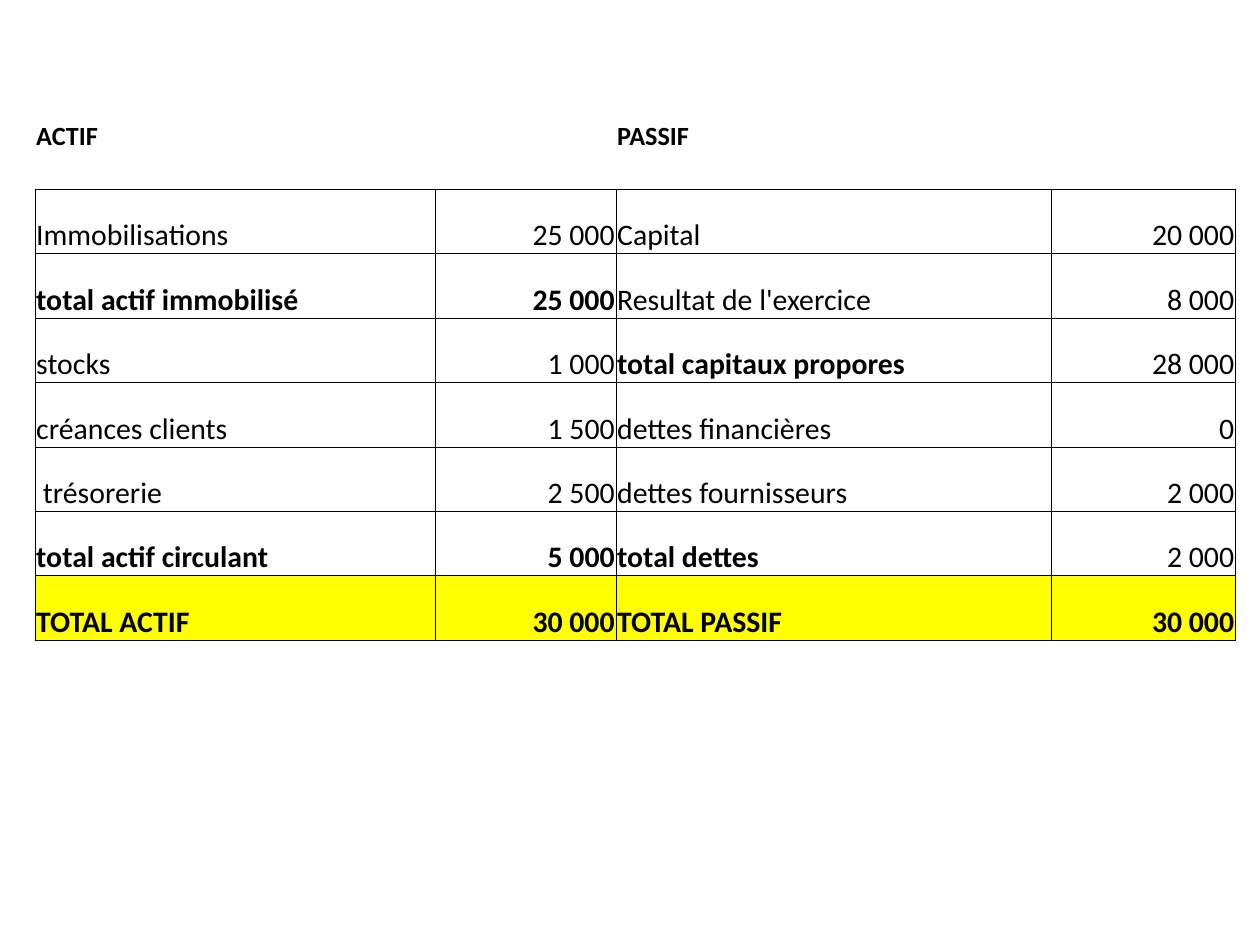
import pptx
import pptx.dml.color
import pptx.enum.text
import pptx.oxml.ns
import pptx.util
import lxml.etree

Pt = pptx.util.Pt
BLACK = pptx.dml.color.RGBColor(0x00, 0x00, 0x00)
YELLOW = pptx.dml.color.RGBColor(0xFF, 0xFF, 0x00)
PLAIN_TABLE_STYLE = "{2D5ABB26-0587-4C30-8999-92F81FD0307C}"
COLUMN_WIDTHS = [229, 103, 249, 105]
HEADING_HEIGHT, GAP_HEIGHT, ENTRY_HEIGHT = 32.6, 20.9, 36.8
HEADING_ROWS = 2

BALANCE_SHEET = [
    ("ACTIF", "", "PASSIF", ""),
    ("", "", "", ""),
    ("Immobilisations", "25 000", "Capital", "20 000"),
    ("total actif immobilisé", "25 000", "Resultat de l'exercice", "8 000"),
    ("stocks", "1 000", "total capitaux propores", "28 000"),
    ("créances clients", "1 500", "dettes financières", "0"),
    (" trésorerie", "2 500", "dettes fournisseurs", "2 000"),
    ("total actif circulant", "5 000", "total dettes", "2 000"),
    ("TOTAL ACTIF", "30 000", "TOTAL PASSIF", "30 000"),
]


class BalanceSlide:
    font_name = "Calibri"
    heading_size = Pt(15)
    entry_size = Pt(17)
    border_width = Pt(0.5)

    def __init__(self, slide):
        self.slide = slide

    def add_child(self, parent, tag, **attributes):
        return lxml.etree.SubElement(parent, pptx.oxml.ns.qn(tag), **attributes)

    def draw_borders(self, cell, sides):
        properties = cell._tc.get_or_add_tcPr()
        for position, side in enumerate(sides):
            border = self.add_child(properties, f"a:ln{side}", w=str(self.border_width))
            fill = self.add_child(border, "a:solidFill")
            self.add_child(fill, "a:srgbClr", val=str(BLACK))
            properties.insert(position, border)

    def write_cell(self, cell, text, size, bold, align_right):
        cell.margin_left = cell.margin_right = cell.margin_top = Pt(0.7)
        cell.margin_bottom = Pt(0)
        cell.vertical_anchor = pptx.enum.text.MSO_ANCHOR.BOTTOM
        paragraph = cell.text_frame.paragraphs[0]
        if not text:
            self.add_child(paragraph._p, "a:endParaRPr", sz=str(int(size.pt * 100)))
            return
        paragraph.text = text
        if align_right:
            paragraph.alignment = pptx.enum.text.PP_ALIGN.RIGHT
        font = paragraph.runs[0].font
        font.name = self.font_name
        font.size = size
        font.bold = bold
        font.color.rgb = BLACK

    def add_balance_sheet(self, left, top, widths, heights, entries):
        table = self.slide.shapes.add_table(
            len(entries), len(widths), Pt(left), Pt(top),
            Pt(sum(widths)), Pt(sum(heights))).table
        table.first_row = table.horz_banding = False
        table._tbl.tblPr.find(pptx.oxml.ns.qn("a:tableStyleId")).text = PLAIN_TABLE_STYLE
        for column, width in zip(table.columns, widths):
            column.width = Pt(width)
        last_row = len(entries) - 1
        for row, entry in enumerate(entries):
            table.rows[row].height = Pt(heights[row])
            is_heading = row < HEADING_ROWS
            for column, text in enumerate(entry):
                cell = table.cell(row, column)
                is_amount = column % 2 == 1
                label = entry[column - 1] if is_amount else text
                is_total = label.lower().startswith("total")
                plain_amount = column == 3 and row < last_row
                bold = is_heading or (is_total and not plain_amount)
                size = self.heading_size if is_heading else self.entry_size
                self.write_cell(cell, text, size, bold, is_amount)
                if row == last_row:
                    cell.fill.solid()
                    cell.fill.fore_color.rgb = YELLOW
                else:
                    cell.fill.background()
                if not is_heading:
                    self.draw_borders(cell, "LRTB")
                elif row == HEADING_ROWS - 1:
                    self.draw_borders(cell, "B")


def main():
    presentation = pptx.Presentation()
    presentation.slide_width, presentation.slide_height = Pt(720), Pt(540)
    balance = BalanceSlide(presentation.slides.add_slide(presentation.slide_layouts[6]))
    entry_count = len(BALANCE_SHEET) - HEADING_ROWS
    heights = [HEADING_HEIGHT, GAP_HEIGHT] + [ENTRY_HEIGHT] * entry_count
    balance.add_balance_sheet(20, 54.8, COLUMN_WIDTHS, heights, BALANCE_SHEET)
    presentation.save("out.pptx")


if __name__ == "__main__":
    main()
